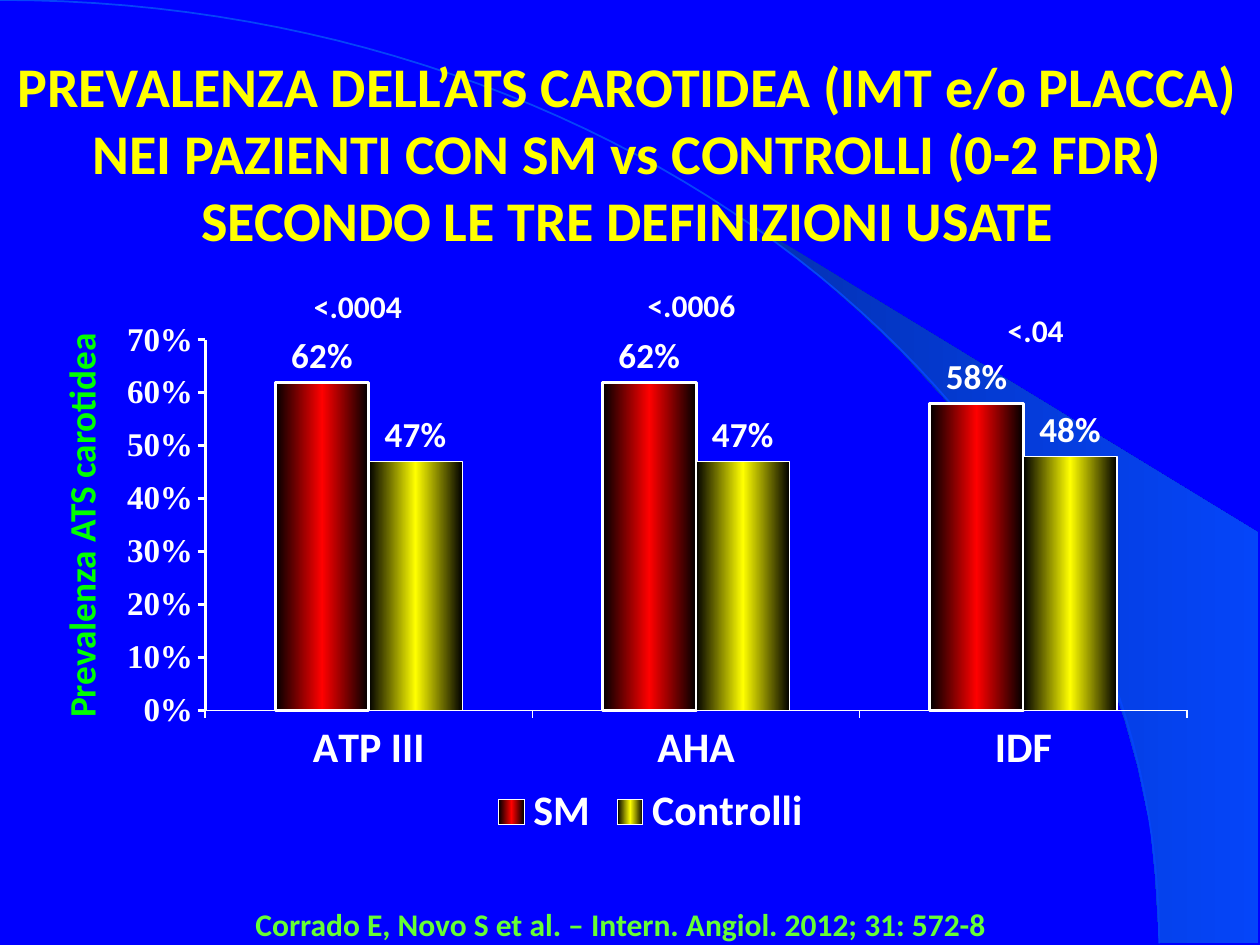
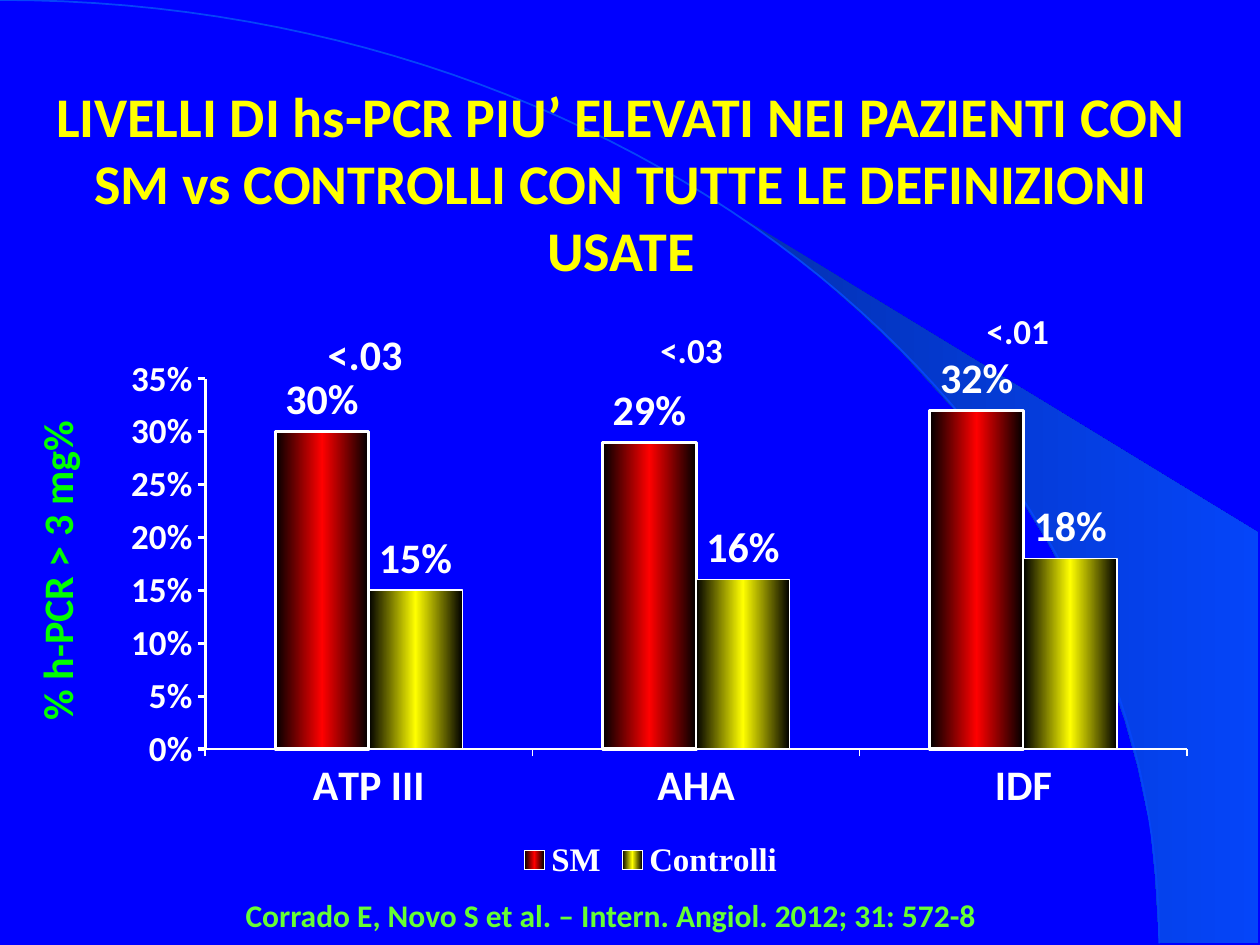
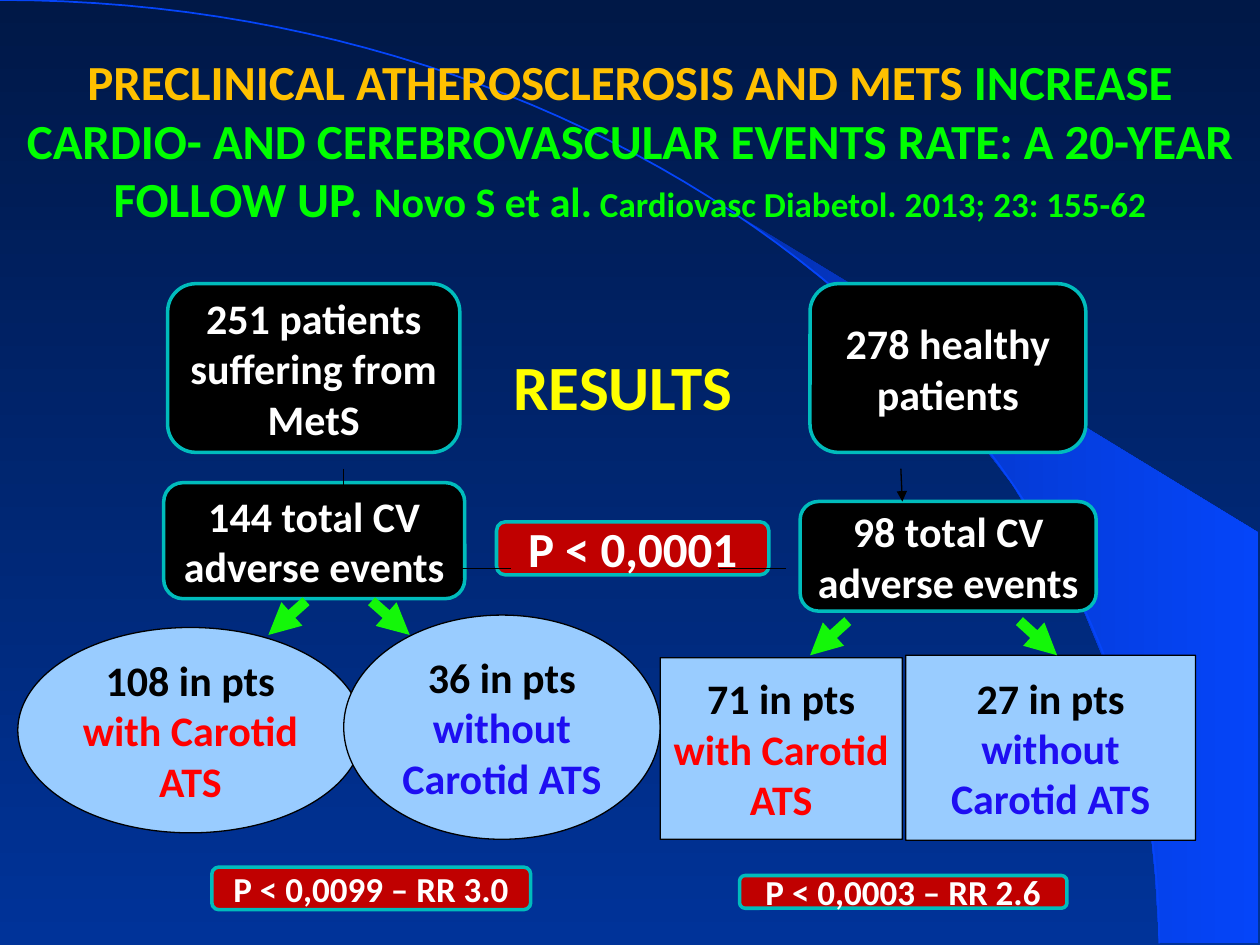
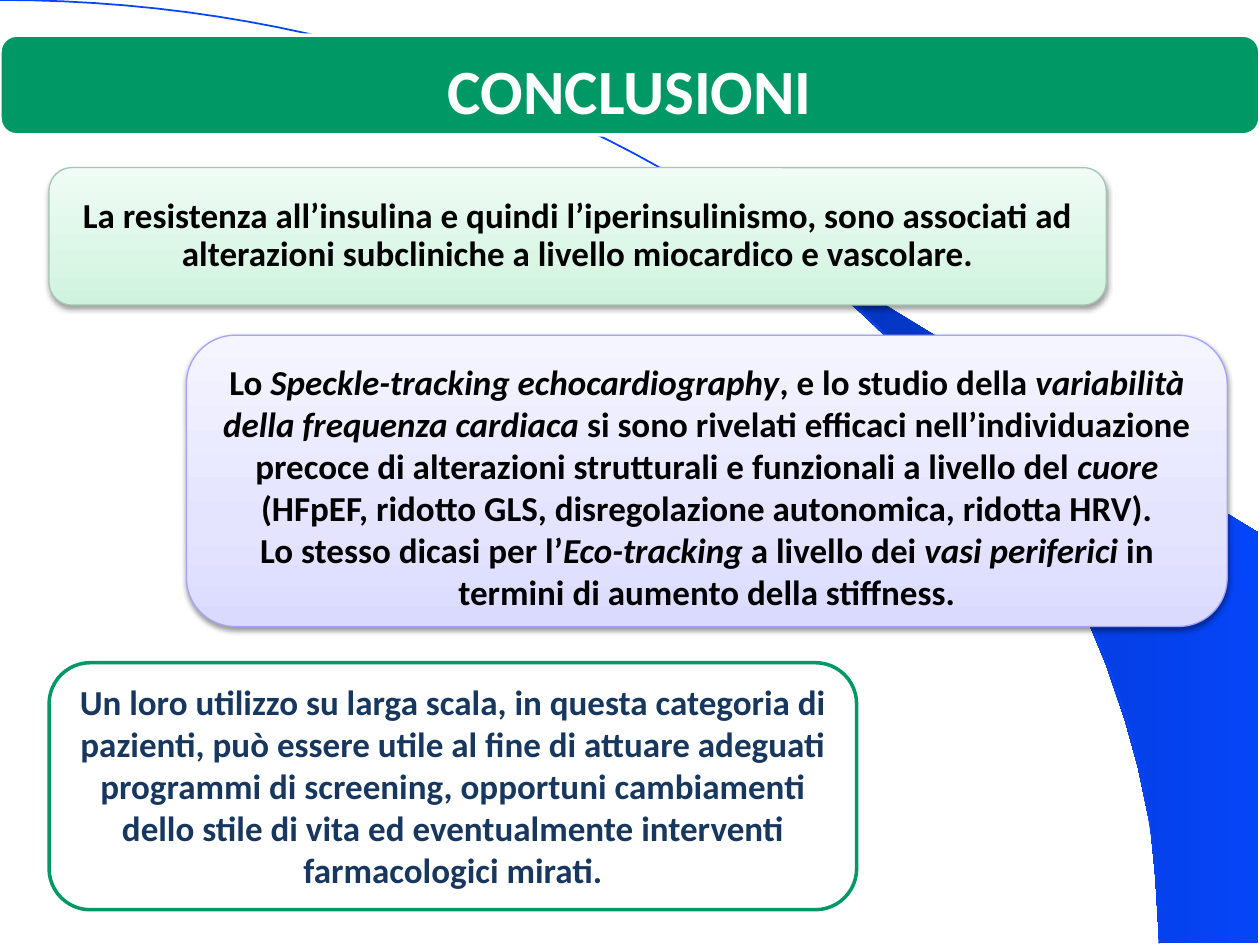
from typing import NamedTuple

from lxml.etree import SubElement
from pptx import Presentation
from pptx.chart.data import CategoryChartData
from pptx.dml.color import RGBColor
from pptx.enum.chart import XL_CHART_TYPE, XL_LABEL_POSITION, XL_LEGEND_POSITION, XL_TICK_MARK
from pptx.enum.shapes import MSO_CONNECTOR, MSO_SHAPE
from pptx.enum.text import MSO_ANCHOR, PP_ALIGN
from pptx.oxml.ns import qn
from pptx.util import Cm, Pt

WHITE, BLACK, YELLOW, GREEN, RED = "FFFFFF", "000000", "FFFF00", "00FF00", "FF0000"
BRIGHT_BLUE, BACKGROUND_BLUE, VIOLET_BLUE = "0545F9", "0000FF", "1E0EF2"
TEAL, EMERALD, CITATION_GREEN, ARROW_GREEN = "00BCBC", "009966", "66FF33", "14F709"

SWOOSH_POINTS = [
    (23.37, 19), (25.37, 19.02), (25.37, 10.74), (14.96, 4.39), (15.85, 5.05),
    (16.59, 5.64), (17.4, 6.35), (18.19, 7.11), (19.35, 8.38), (20.4, 9.75),
    (21.13, 10.95), (21.79, 12.17), (22.3, 13.41), (22.68, 14.53),
    (22.94, 15.47), (23.19, 16.66), (23.29, 17.68),
]
ARC_CONTROLS = [(0, 0), (12.9, 0), (23.37, 8.51), (23.37, 19.02)]
ARC_STEPS = 60
TIGHT = {"margin_left": Cm(0.18), "margin_right": Cm(0.18),
         "margin_top": Cm(0.08), "margin_bottom": Cm(0.08)}
CITATION = "Corrado E, Novo S et al. – Intern. Angiol. 2012; 31: 572-8"

COHORT_NODE = {"fill": BLACK, "line": TEAL, "line_width": 2}
P_VALUE_NODE = {"fill": "C00000", "line": TEAL, "line_width": 2}
OUTCOME_NODE = {"fill": "99CCFF", "line": BLACK, "line_width": 0.75}


class Box(NamedTuple):
    left: float
    top: float
    width: float
    height: float

    def inner(self, left, top, width, height):
        return Box(self.left + left, self.top + top, width, height)

    def point(self, left, top):
        return Cm(self.left + left), Cm(self.top + top)

    def lengths(self):
        return [Cm(value) for value in self]


PAGE = Box(0, 0, 25.4, 19.05)


def color(value):
    return RGBColor.from_string(value)


def set_font(font, size, tint, name="Calibri", **extra):
    values = {"name": name, "size": Pt(size), "bold": True, **extra}
    for key, value in values.items():
        setattr(font, key, value)
    font.color.rgb = color(tint)


def set_line(line, tint, width):
    line.color.rgb = color(tint)
    line.width = Pt(width)


def set_fill(fill, element, value, angle=0):
    if isinstance(value, str):
        fill.solid()
        fill.fore_color.rgb = color(value)
        return
    fill.gradient()
    stops = next(element.iter(qn("a:gsLst")))
    for stop in list(stops):
        stops.remove(stop)
    for position, tint in value:
        stop = SubElement(stops, qn("a:gs"), pos=str(position * 1000))
        SubElement(stop, qn("a:srgbClr"), val=tint)
    next(element.iter(qn("a:lin"))).set("ang", str(angle * 60000))


def write(frame, runs, size, tint, align=PP_ALIGN.CENTER, line_spacing=None, **frame_format):
    values = {"word_wrap": True, "vertical_anchor": MSO_ANCHOR.TOP, **frame_format}
    for key, value in values.items():
        setattr(frame, key, value)
    paragraph = frame.paragraphs[0]
    paragraph.alignment = align
    paragraph.line_spacing = line_spacing
    for text, changes in [(runs, {})] if isinstance(runs, str) else runs:
        for index, line in enumerate(text.split("\n")):
            if index:
                paragraph.add_line_break()
            if line:
                run = paragraph.add_run()
                run.text = line
                set_font(run.font, **{"size": size, "tint": tint, **changes})


def add_text(slide, box, runs, size, tint, rotation=0, **options):
    shape = slide.shapes.add_textbox(*box.lengths())
    shape.rotation = rotation
    write(shape.text_frame, runs, size, tint, **options)


def add_panel(slide, box, fill, line, line_width, kind=MSO_SHAPE.ROUNDED_RECTANGLE,
              roundness=None, angle=0):
    shape = slide.shapes.add_shape(kind, *box.lengths())
    shape.shadow.inherit = False
    set_fill(shape.fill, shape.element, fill, angle)
    set_line(shape.line, line, line_width)
    if roundness is not None:
        shape.adjustments[0] = roundness
    return shape


def add_node(slide, box, runs, size, tint, **style):
    shape = add_panel(slide, box, **style)
    write(shape.text_frame, runs, size, tint, vertical_anchor=MSO_ANCHOR.MIDDLE, **TIGHT)


def add_link(slide, box, ends, tint=BLACK, width=0.75, arrow=True):
    start_left, start_top, end_left, end_top = ends
    connector = slide.shapes.add_connector(
        MSO_CONNECTOR.STRAIGHT, *box.point(start_left, start_top), *box.point(end_left, end_top))
    set_line(connector.line, tint, width)
    properties = connector.element.spPr
    if arrow:
        SubElement(properties.find(qn("a:ln")), qn("a:tailEnd"), type="triangle")
    SubElement(properties, qn("a:effectLst"))


def add_outline(slide, box, points, close):
    corners = [box.point(*point) for point in points]
    builder = slide.shapes.build_freeform(*corners[0], scale=1.0)
    builder.add_line_segments(corners[1:], close=close)
    shape = builder.convert_to_shape()
    shape.shadow.inherit = False
    return shape


def arc_point(step):
    t = step / ARC_STEPS
    weights = ((1 - t) ** 3, 3 * t * (1 - t) ** 2, 3 * t ** 2 * (1 - t), t ** 3)
    return tuple(sum(weight * control[axis] for weight, control in zip(weights, ARC_CONTROLS))
                 for axis in (0, 1))


def new_slide(presentation, background):
    slide = presentation.slides.add_slide(presentation.slide_layouts[6])
    set_fill(slide.background.fill, slide.element, background, 90)
    swoosh = add_outline(slide, PAGE, SWOOSH_POINTS, True)
    set_fill(swoosh.fill, swoosh.element, [(0, "0431B2"), (100, BRIGHT_BLUE)])
    swoosh.line.fill.background()
    arc = add_outline(slide, PAGE, [arc_point(step) for step in range(ARC_STEPS + 1)], False)
    arc.fill.background()
    set_line(arc.line, BRIGHT_BLUE, 1)
    return slide


def set_plot_layout(chart, *fractions):
    plot_area = next(chart.element.iter(qn("c:plotArea")))
    for layout in plot_area.findall(qn("c:layout")):
        plot_area.remove(layout)
    layout = SubElement(plot_area, qn("c:layout"))
    plot_area.insert(0, layout)
    manual = SubElement(layout, qn("c:manualLayout"))
    settings = [("layoutTarget", "inner"), ("xMode", "edge"), ("yMode", "edge")]
    settings += zip("xywh", fractions)
    for tag, value in settings:
        SubElement(manual, qn(f"c:{tag}"), val=str(value))


def add_prevalence_chart(slide, box, values, maximum, step, axis_font, label_size, legend_font):
    data = CategoryChartData(number_format="0%")
    data.categories = ["ATP III", "AHA", "IDF"]
    for name, numbers in values.items():
        data.add_series(name, numbers)
    chart = slide.shapes.add_chart(XL_CHART_TYPE.COLUMN_CLUSTERED, *box.lengths(), data).chart
    set_font(chart.font, 16, WHITE, "DejaVu Sans Mono")
    chart.has_title = False
    chart.has_legend = True
    chart.legend.position = XL_LEGEND_POSITION.BOTTOM
    chart.legend.include_in_layout = False
    set_font(chart.legend.font, **legend_font)
    set_plot_layout(chart, 0.092, 0.073, 0.899, 0.679)

    axes = [(chart.category_axis, {"size": 24, "tint": WHITE}, 0.89),
            (chart.value_axis, axis_font, 1.78)]
    for axis, font, width in axes:
        axis.has_major_gridlines = False
        axis.major_tick_mark = XL_TICK_MARK.OUTSIDE
        axis.minor_tick_mark = XL_TICK_MARK.NONE
        set_font(axis.tick_labels.font, **font)
        set_line(axis.format.line, WHITE, width)
    scale = {"minimum_scale": 0, "maximum_scale": maximum, "major_unit": step}
    for key, value in scale.items():
        setattr(chart.value_axis, key, value)
    chart.value_axis.tick_labels.number_format = "0%"
    chart.value_axis.tick_labels.number_format_is_linked = False

    plot = chart.plots[0]
    plot.gap_width = 150
    plot.overlap = 0
    plot.vary_by_categories = False
    for series, tint, width in zip(plot.series, (RED, YELLOW), (1.78, 0.89)):
        set_fill(series.format.fill, series._element, [(0, BLACK), (50, tint), (100, BLACK)])
        set_line(series.format.line, WHITE, width)
        labels = series.data_labels
        label_format = {"show_value": True, "number_format": "0%",
                        "number_format_is_linked": False,
                        "position": XL_LABEL_POSITION.OUTSIDE_END}
        for key, value in label_format.items():
            setattr(labels, key, value)
        set_font(labels.font, label_size, WHITE)


def build_chart_slide(presentation, title_box, title, chart_box, chart_options, marks,
                      axis_title, citation_box):
    slide = new_slide(presentation, BACKGROUND_BLUE)
    add_prevalence_chart(slide, chart_box, **chart_options)
    add_text(slide, title_box, title, 32, YELLOW)
    for place, text, size in marks:
        add_text(slide, chart_box.inner(*place), text, size, WHITE)
    place, text, size = axis_title
    add_text(slide, chart_box.inner(*place), text, size, GREEN, rotation=270)
    add_text(slide, citation_box, CITATION, 18, CITATION_GREEN, align=PP_ALIGN.LEFT)


def add_cohort(slide, box, patients, events, outcomes, outcome_style, p_value, down, branches):
    for place, text in (patients, events):
        add_node(slide, box.inner(*place), text, 24, WHITE, **COHORT_NODE)
    for (place, count, group), tint in zip(outcomes, (RED, VIOLET_BLUE)):
        runs = [(f"{count} in pts\n", {}), (group, {"tint": tint})]
        add_node(slide, box.inner(*place), runs, 24, BLACK, **OUTCOME_NODE, **outcome_style)
    place, text = p_value
    add_node(slide, box.inner(*place), text, 20, WHITE, **P_VALUE_NODE)
    add_link(slide, box, down)
    for ends in branches:
        add_link(slide, box, ends, ARROW_GREEN, 6)


def build_results_slide(presentation):
    slide = new_slide(presentation, [(0, "001847"), (100, "003399")])
    add_text(slide, PAGE.inner(8.51, 6.93, 8.1, 1.7), "RESULTS", 36, YELLOW, **TIGHT)
    with_ats, without_ats = "with Carotid\nATS", "without\nCarotid ATS"
    add_cohort(
        slide, PAGE.inner(0.36, 5.72, 12.95, 12.62),
        patients=((3.02, 0, 5.89, 3.4), "251 patients suffering from MetS"),
        events=((2.94, 4.01, 6.07, 2.34), "144 total CV\nadverse events"),
        outcomes=[((0, 6.93, 6.96, 4.14), 108, with_ats),
                  ((6.57, 6.68, 6.38, 4.52), 36, without_ats)],
        outcome_style={"kind": MSO_SHAPE.OVAL},
        p_value=((3.91, 11.76, 6.43, 0.86), "P < 0,0099 – RR 3.0"),
        down=(6.57, 3.73, 6.57, 4.72),
        branches=[(5.81, 6.4, 5.05, 7.08), (7.13, 6.4, 7.9, 7.08)])
    add_cohort(
        slide, PAGE.inner(13.31, 5.72, 10.79, 12.59),
        patients=((3.02, 0, 5.56, 3.4), "278 healthy\npatients"),
        events=((2.82, 4.39, 5.97, 2.21), "98 total CV\nadverse events"),
        outcomes=[((0, 7.54, 4.88, 3.66), 71, with_ats),
                  ((4.95, 7.49, 5.84, 3.73), 27, without_ats)],
        outcome_style={"roundness": 0.001},
        p_value=((1.6, 11.93, 6.6, 0.66), "P < 0,0003 – RR 2.6"),
        down=(4.85, 3.73, 4.88, 4.39),
        branches=[(3.78, 6.8, 3.02, 7.49), (7.24, 6.8, 8, 7.49)])
    add_node(slide, PAGE.inner(10.01, 10.52, 5.49, 1.07), "P < 0,0001", 28, WHITE, **P_VALUE_NODE)
    for left, right in ((8.81, 10.31), (14.5, 15.85)):
        add_link(slide, PAGE, (left, 11.46, right, 11.46), arrow=False)
    title = [
        ("PRECLINICAL ATHEROSCLEROSIS AND METS ", {"tint": "FFC000"}),
        ("INCREASE CARDIO- AND CEREBROVASCULAR EVENTS RATE: A 20-YEAR FOLLOW UP. ", {}),
        ("Novo S et al.", {"size": 24}),
        (" Cardiovasc Diabetol. 2013; 23: 155-62", {"size": 20}),
    ]
    add_text(slide, PAGE.inner(0, 0.91, 25.4, 3.84), title, 28, GREEN)


def add_card(slide, box, margins, runs, tint, style, shadow=False, **options):
    panel = add_panel(slide, box, **style)
    if shadow:
        effects = panel.element.spPr.find(qn("a:effectLst"))
        outer = SubElement(effects, qn("a:outerShdw"), blurRad=str(Pt(3.1)), dist=str(Pt(1.6)),
                           dir="5400000", rotWithShape="0")
        tone = SubElement(outer, qn("a:srgbClr"), val=BLACK)
        SubElement(tone, qn("a:alpha"), val="38000")
    side, top = margins
    text_box = box.inner(side, top, box.width - 2 * side, box.height - 2 * top)
    add_text(slide, text_box, runs, 20, tint, **options)


def build_conclusions_slide(presentation):
    slide = new_slide(presentation, WHITE)
    banner = PAGE.inner(0, 0.71, 25.4, 2.01)
    add_panel(slide, banner, EMERALD, WHITE, 2)
    add_text(slide, banner.inner(0, 0.2, 25.4, 1.8), "CONCLUSIONI", 36, WHITE)
    mint = {"fill": [(0, "CDF3DD"), (35, "DBF6E7"), (100, "F0FCF5")], "angle": 270,
            "line": "A5C6B4", "line_width": 0.75}
    lilac = {"fill": [(0, "DADAFF"), (35, "E4E4FF"), (100, "F5F5FF")], "angle": 270,
             "line": "A4A4FB", "line_width": 0.75}
    outlined = {"fill": WHITE, "line": EMERALD, "line_width": 2}
    italic = {"italic": True}
    add_card(
        slide, PAGE.inner(0.99, 3.38, 21.31, 2.77), (0.13, 0.13),
        "La resistenza all’insulina e quindi l’iperinsulinismo, sono associati ad "
        "alterazioni subcliniche a livello miocardico e vascolare.",
        BLACK, mint, shadow=True, line_spacing=0.9, vertical_anchor=MSO_ANCHOR.MIDDLE,
        **dict.fromkeys(TIGHT, Cm(0.2)))
    findings = [
        ("Lo ", {}), ("Speckle-tracking echocardiography", italic),
        (", e lo studio della ", {}), ("variabilità della frequenza cardiaca ", italic),
        ("si sono rivelati efficaci nell’individuazione precoce di alterazioni "
         "strutturali e funzionali a livello del ", {}),
        ("cuore ", italic),
        ("(HFpEF, ridotto GLS, disregolazione autonomica, ridotta HRV).\n"
         "Lo stesso dicasi per l’", {}),
        ("Eco-tracking", italic), (" a livello dei ", {}), ("vasi periferici ", italic),
        ("in termini di aumento della stiffness.", {}),
    ]
    add_card(slide, PAGE.inner(3.76, 6.76, 20.98, 5.87), (0.39, 0.38), findings,
             BLACK, lilac, shadow=True)
    add_card(
        slide, PAGE.inner(0.99, 13.36, 16.28, 4.98), (0.22, 0.23),
        "Un loro utilizzo su larga scala, in questa categoria di pazienti, può essere utile "
        "al fine di attuare adeguati programmi di screening, opportuni cambiamenti dello "
        "stile di vita ed eventualmente interventi farmacologici mirati.",
        "17375E", outlined)


def main():
    presentation = Presentation()
    presentation.slide_width = Cm(PAGE.width)
    presentation.slide_height = Cm(PAGE.height)
    build_chart_slide(
        presentation,
        title_box=PAGE.inner(0, 0.91, 25.3, 4.37),
        title="PREVALENZA DELL’ATS CAROTIDEA (IMT e/o PLACCA) NEI PAZIENTI CON SM vs "
              "CONTROLLI (0-2 FDR) SECONDO LE TRE DEFINIZIONI USATE",
        chart_box=PAGE.inner(2.11, 6.05, 22.02, 11),
        chart_options={
            "values": {"SM": (0.62, 0.62, 0.58), "Controlli": (0.47, 0.47, 0.48)},
            "maximum": 0.7, "step": 0.1, "label_size": 20,
            "axis_font": {"size": 18.9, "tint": WHITE, "name": "Times New Roman"},
            "legend_font": {"size": 24, "tint": WHITE}},
        marks=[((17.35, 0.1, 2.84, 1.02), "<.04", 18),
               ((10.41, -0.41, 2.84, 1.02), "<.0006", 18),
               ((3.53, -0.39, 3.15, 1.02), "<.0004", 18)],
        axis_title=((-7.14, 3.96, 13.34, 1.17), "Prevalenza ATS carotidea", 21.3),
        citation_box=PAGE.inner(4.9, 18.11, 15.6, 1.02))
    build_chart_slide(
        presentation,
        title_box=PAGE.inner(0, 1.52, 25.04, 3),
        title="LIVELLI DI hs-PCR PIU’ ELEVATI NEI PAZIENTI CON SM vs CONTROLLI CON TUTTE "
              "LE DEFINIZIONI\nUSATE",
        chart_box=PAGE.inner(2.11, 6.83, 22.02, 11),
        chart_options={
            "values": {"SM": (0.3, 0.29, 0.32), "Controlli": (0.15, 0.16, 0.18)},
            "maximum": 0.35, "step": 0.05, "label_size": 24,
            "axis_font": {"size": 20, "tint": WHITE},
            "legend_font": {"size": 18.8, "tint": WHITE, "name": "Times New Roman"}},
        marks=[((16.99, -0.71, 2.84, 1.12), "<.01", 20),
               ((10.41, -0.33, 2.84, 1.12), "<.03", 20),
               ((3.83, -0.33, 2.84, 1.27), "<.03", 24)],
        axis_title=((-5.95, 4.04, 9.96, 1.27), "% h-PCR > 3 mg%", 24),
        citation_box=PAGE.inner(4.7, 17.93, 15.75, 1.02))
    build_results_slide(presentation)
    build_conclusions_slide(presentation)
    presentation.save("out.pptx")


if __name__ == "__main__":
    main()
